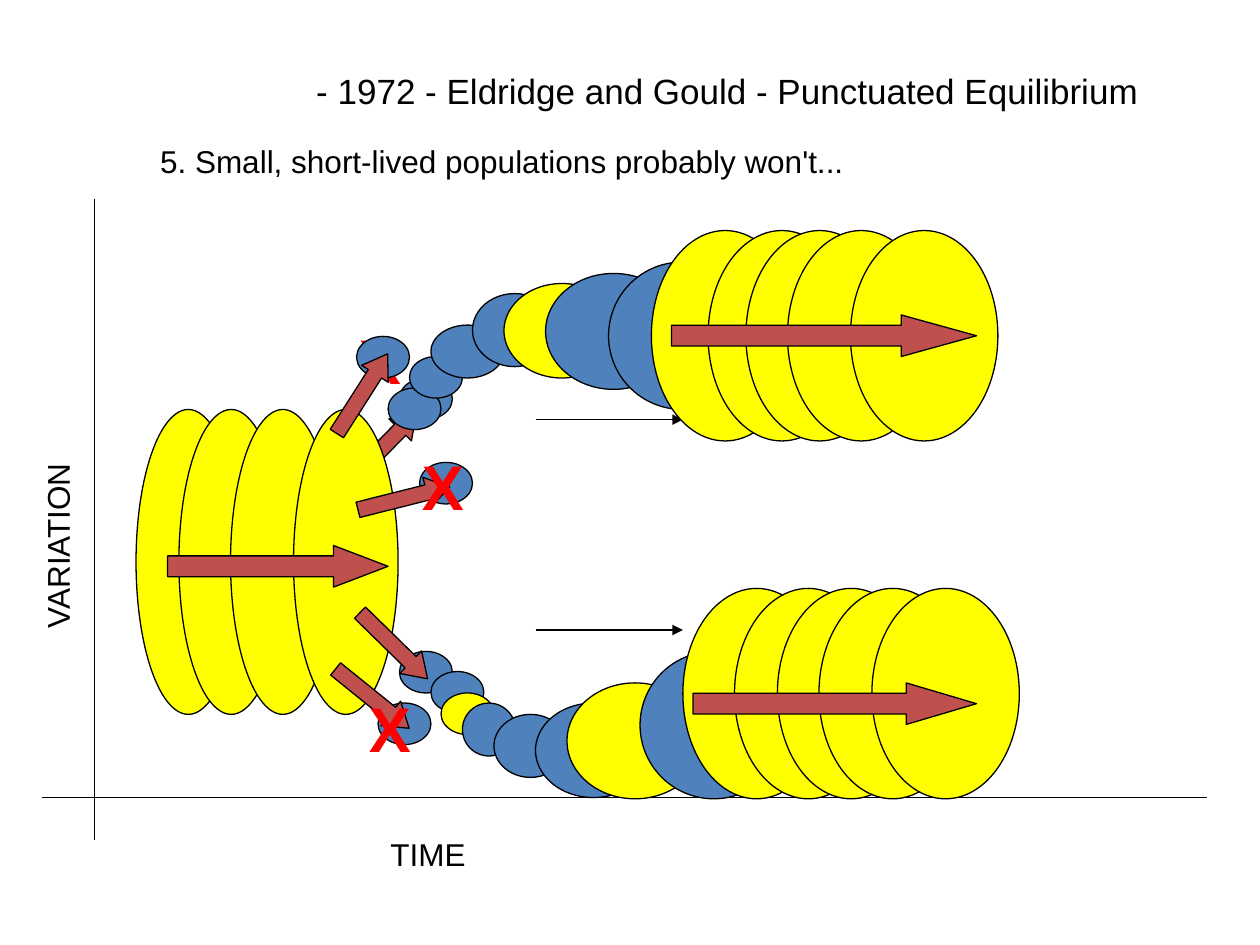
from lxml import etree
from pptx import Presentation, util as u
from pptx.dml.color import RGBColor
from pptx.enum import shapes as sh, text as tx
from pptx.oxml.ns import qn

BLACK, RED, BLUE = "000000", "FF0000", "4F81BD"
GOLD, RUST = "FFFF00", "C0504D"
DOT = (0.42, 0.33)      # size of a small population


def rgb(code):
    return RGBColor.from_string(code)


def place(box):
    return [u.Inches(n) for n in box]


def write(shape, words, size, color=BLACK, bold=False):
    frame = shape.text_frame
    frame.word_wrap = True
    frame.auto_size = tx.MSO_AUTO_SIZE.NONE
    frame.vertical_anchor = tx.MSO_ANCHOR.TOP
    frame.text = words
    para = frame.paragraphs[0]
    para.alignment = tx.PP_ALIGN.LEFT
    font = para.runs[0].font
    font.name, font.size, font.bold = "Arial", u.Pt(size), bold
    font.color.rgb = rgb(color)


def label(slide, box, words, size=18, color=BLACK, bold=False, turn=0):
    item = slide.shapes.add_textbox(*place(box))
    item.rotation = turn
    write(item, words, size, color, bold)


def solid(slide, kind, box, color):
    item = slide.shapes.add_shape(kind, *place(box))
    item.shadow.inherit = False
    item.fill.solid()
    item.fill.fore_color.rgb = rgb(color)
    item.line.color.rgb = rgb(BLACK)
    item.line.width = u.Pt(0.75)
    return item


def oval(slide, box, color):
    solid(slide, sh.MSO_SHAPE.OVAL, box, color)


def arrow(slide, box, head=0.75, turn=0):
    item = solid(slide, sh.MSO_SHAPE.RIGHT_ARROW, box, RUST)
    item.adjustments[0], item.adjustments[1] = 0.5, head
    item.rotation = turn


def line(slide, x1, y1, x2, y2, tip=False):
    item = slide.shapes.add_connector(
        sh.MSO_CONNECTOR.STRAIGHT, *place((x1, y1, x2, y2)))
    item.line.color.rgb = rgb(BLACK)
    item.line.width = u.Pt(0.75)
    if tip:
        end = etree.SubElement(item.line._get_or_add_ln(), qn("a:tailEnd"))
        end.set("type", "triangle")
    etree.SubElement(item._element.spPr, qn("a:effectLst"))


def heads(slide, box):
    """Title and the numbered point below it."""
    x, y, w, h = box
    title, body = slide.placeholders
    title.left, title.top, title.width, title.height = place((x, y, w, h))
    write(title, "- 1972 - Eldridge and Gould - Punctuated Equilibrium", 20)
    title.text_frame.margin_left = u.Inches(2.18)
    body.left, body.top, body.width, body.height = place(
        (x + 0.84, y + 0.58, 7.67, 0.4))
    write(body, "5. Small, short-lived populations probably won't...", 18)
    para = body.text_frame.paragraphs[0]
    para.space_before = u.Pt(0)
    props = para._p.get_or_add_pPr()
    props.set("marL", "0")
    props.set("indent", "0")
    etree.SubElement(props, qn("a:buNone"))


def axes(slide, box):
    """Crossed axes with their names."""
    x, y, w, h = box
    across, base = x + 0.42, y + 4.75
    line(slide, across, y, across, y + h)
    line(slide, x, base, x + w, base)
    label(slide, (x + 2.67, base + 0.25, 4.17, 0.4), "TIME")
    label(slide, (x - 2.25, y + 0.93, 4.75, 0.4), "VARIATION", turn=270)


def stack(slide, box, steps, width, shaft, head):
    """Overlapping large populations with one arrow along them."""
    x, y, w, h = box
    for step in steps:
        oval(slide, (x + step, y, width, h), GOLD)
    dx, dy, long = shaft
    arrow(slide, (x + dx, y + dy, long, 0.33), head)


def chain(slide, box, parts):
    """A line of populations that grow: left, top, width, height, colour."""
    x, y = box[:2]
    for dx, dy, w, h, color in parts:
        oval(slide, (x + dx, y + dy, w, h), color)


def cross(slide, x, y):
    label(slide, (x, y, 0.83, 0.7), "X", 36, RED, True)


def hidden_buds(slide, box):
    """Buds that lie behind the parent populations."""
    x, y = box[:2]
    oval(slide, (x + 0.83, y + 1.17, *DOT), BLUE)
    arrow(slide, (x + 0.17, y + 0.92, 0.75, 0.25), turn=314.4)
    cross(slide, x + 0.25, y)
    oval(slide, (x + 0.67, y + 0.5, *DOT), BLUE)


def buds(slide, box):
    """Small populations that split off, two of them crossed out."""
    x, y = box[:2]
    for dx, dy in [(0.33, 0.17), (0.58, 0.58), (0.5, 3.08), (0.67, 2.67)]:
        oval(slide, (x + dx, y + dy, *DOT), BLUE)
    for dx, dy, turn in [(0, 0.5, 302.5), (0.25, 2.5, 44.4),
                         (0.08, 2.92, 38.9), (0.33, 1.33, 345.9)]:
        arrow(slide, (x + dx, y + dy, 0.75, 0.25), turn=turn)
    for dx, dy in [(0.75, 1), (0.33, 2.92)]:
        cross(slide, x + dx, y + dy)


def main():
    deck = Presentation()
    deck.slide_width, deck.slide_height = u.Inches(10), u.Inches(7.5)
    slide = deck.slides.add_slide(deck.slide_layouts[1])
    heads(slide, (0.33, 0.5, 9.42, 0.93))

    # Thin time arrows
    for y in (3.33, 5):
        line(slide, 4.25, y, 5.42, y, tip=True)

    # Parent populations and their buds
    split = (2.5, 2.5, 1.58, 3.62)
    hidden_buds(slide, split)
    axes(slide, (0.33, 1.58, 9.25, 5.09))
    stack(slide, (1.08, 3.25, 2.08, 2.42), (0, 0.34, 0.75, 1.25), 0.83,
          (0.25, 1.08, 1.75), 1.31)
    buds(slide, split)

    # Lower branch
    chain(slide, (3.42, 5.17, 2.83, 1.17), [
        (0, 0.16, *DOT, BLUE), (0.08, 0.33, *DOT, GOLD),
        (0.25, 0.41, 0.42, 0.42, BLUE), (0.5, 0.5, 0.58, 0.5, BLUE),
        (0.83, 0.41, 0.92, 0.75, BLUE), (1.08, 0.25, 1.08, 0.92, GOLD),
        (1.66, 0, 1.17, 1.17, BLUE)])
    stack(slide, (5.42, 4.67, 2.67, 1.67), (0, 0.41, 0.75, 1.08, 1.5), 1.17,
          (0.08, 0.75, 2.25), 1.69)

    # Upper branch
    chain(slide, (3.25, 2.08, 2.75, 1.17), [
        (0, 0.75, *DOT, BLUE), (0.17, 0.5, 0.58, 0.42, BLUE),
        (0.5, 0.25, 0.67, 0.58, BLUE), (0.75, 0.17, 0.92, 0.75, GOLD),
        (1.08, 0.09, 1.08, 0.92, BLUE), (1.58, 0, 1.17, 1.17, BLUE)])
    stack(slide, (5.17, 1.83, 2.75, 1.67), (0, 0.45, 0.75, 1.08, 1.58), 1.17,
          (0.16, 0.67, 2.42), 1.81)

    deck.save("out.pptx")


if __name__ == "__main__":
    main()
